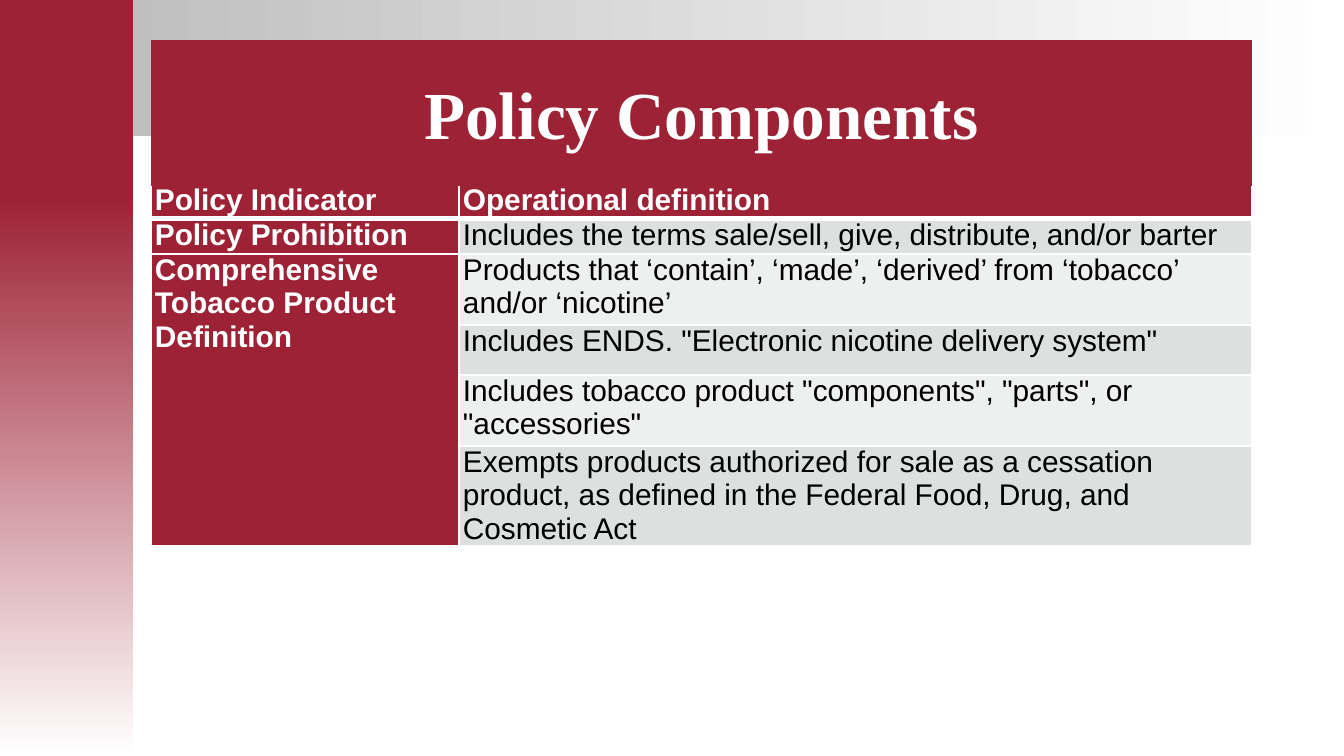
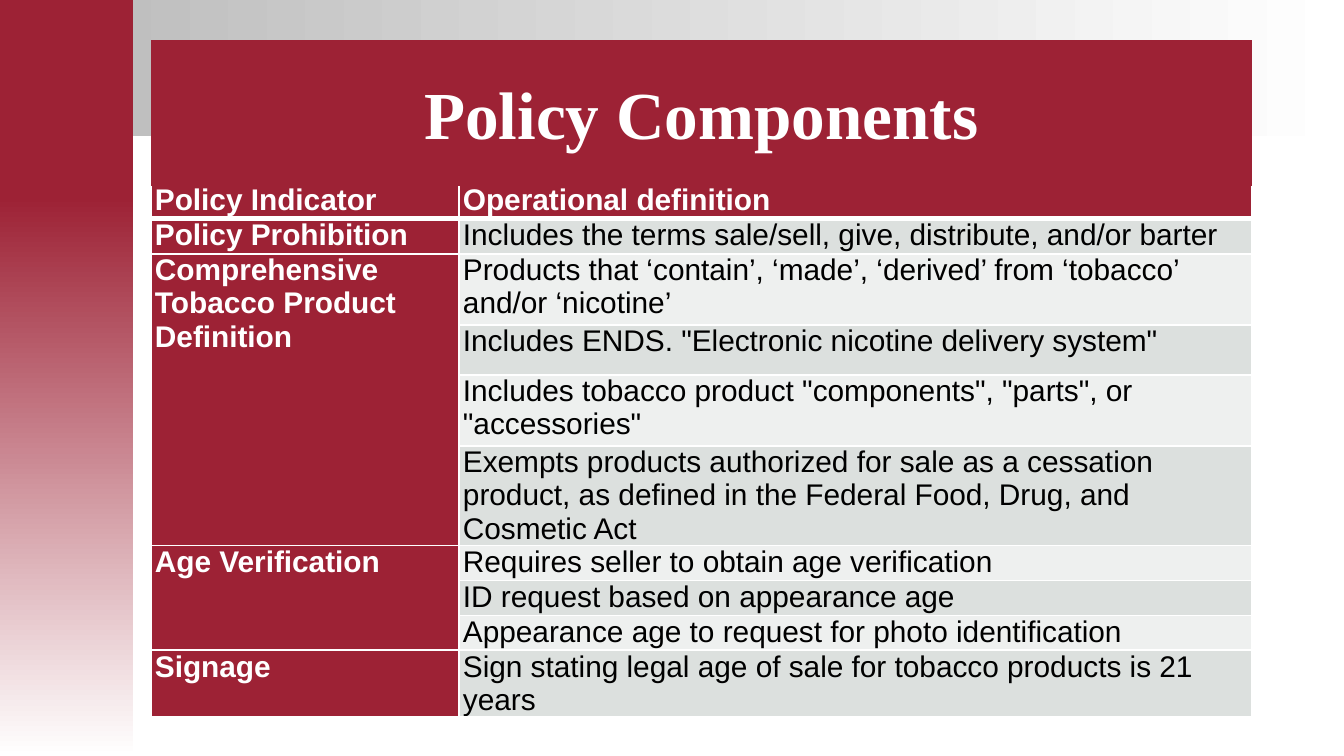
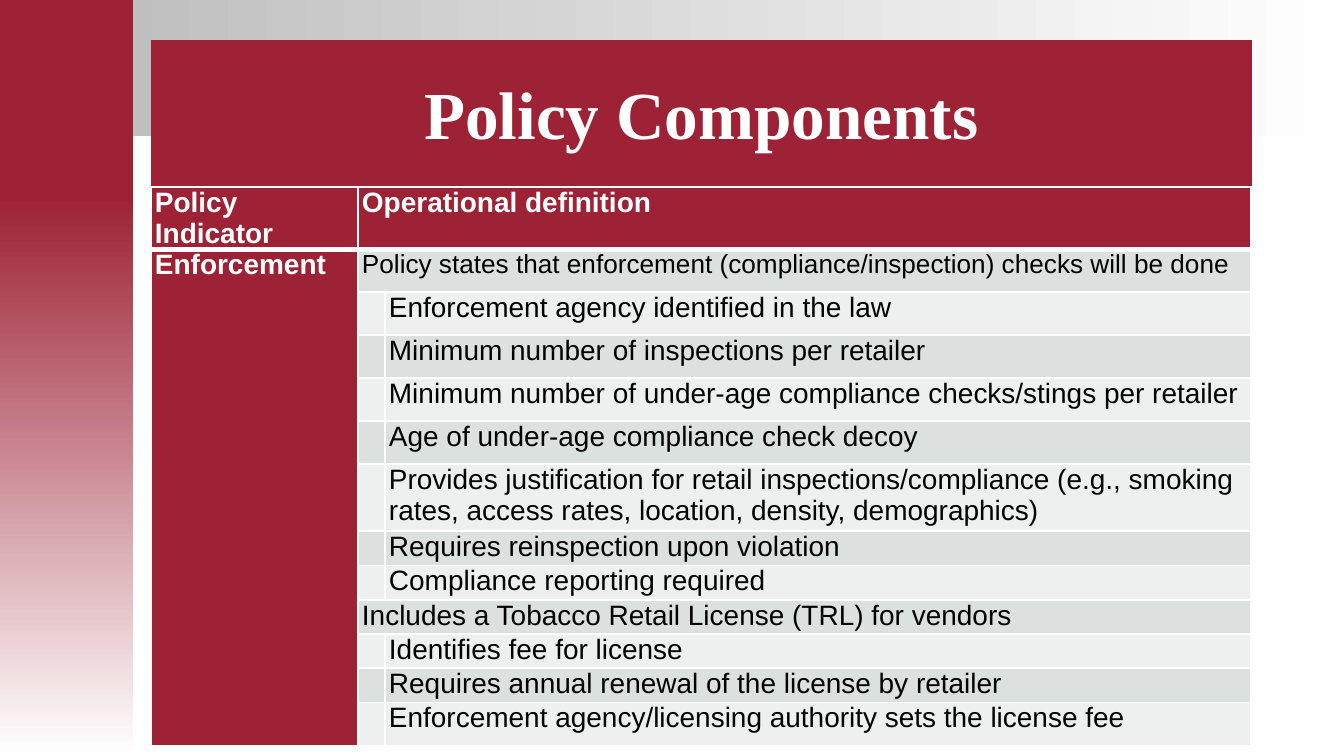
import collections

import lxml.etree
import pptx
import pptx.dml.color
import pptx.enum.shapes
import pptx.enum.text
import pptx.oxml.ns
import pptx.util

PX = 914400 / 134.4
COLORS = {
    "crimson": "9D2235",
    "white": "FFFFFF",
    "black": "000000",
    "silver": "BFBFBF",
    "odd": "DCE0DE",
    "even": "EEF0EF",
}
TITLE_BOX = (151, 40, 1101, 146)
HEADINGS = ("Policy Indicator", "Operational definition")

Definition = collections.namedtuple(
    "Definition", "text height nested size", defaults=(35, False, None))

PRODUCT_GROUPS = [
    ("Policy Prohibition", [
        Definition("Includes the terms sale/sell, give, distribute, and/or barter"),
    ]),
    ("Comprehensive Tobacco Product Definition", [
        Definition("Products that ‘contain’, ‘made’, ‘derived’ from ‘tobacco’ and/or ‘nicotine’", 71),
        Definition('Includes ENDS. "Electronic nicotine delivery system"', 50),
        Definition('Includes tobacco product "components", "parts", or "accessories"', 71),
        Definition("Exempts products authorized for sale as a cessation product, "
                   "as defined in the Federal Food, Drug, and Cosmetic Act", 71),
    ]),
]
SELLER_GROUPS = [
    ("Age Verification", [
        Definition("Requires seller to obtain age verification"),
        Definition("ID request based on appearance age"),
        Definition("Appearance age to request for photo identification"),
    ]),
    ("Signage", [
        Definition("Sign stating legal age of sale for tobacco products is 21 years"),
    ]),
]
ENFORCEMENT_GROUPS = [
    ("Enforcement", [
        Definition("Policy states that enforcement (compliance/inspection) checks will be done", 43, size=14),
        Definition("Enforcement agency identified in the law", 43, True),
        Definition("Minimum number of inspections per retailer", 43, True),
        Definition("Minimum number of under-age compliance checks/stings per retailer", 43, True),
        Definition("Age of under-age compliance check decoy", 43, True),
        Definition("Provides justification for retail inspections/compliance (e.g., smoking rates, "
                   "access rates, location, density, demographics)", 67, True),
        Definition("Requires reinspection upon violation", 34, True),
        Definition("Compliance reporting required", 34, True),
        Definition("Includes a Tobacco Retail License (TRL) for vendors", 34),
        Definition("Identifies fee for license", 34, True),
        Definition("Requires annual renewal of the license by retailer", 34, True),
        Definition("Enforcement agency/licensing authority sets the license fee", 43, True),
    ]),
]


def px(length):
    """Turn whole pixels into EMU."""
    return pptx.util.Emu(round(length * PX))


def rgb(name):
    """Look up a named colour."""
    return pptx.dml.color.RGBColor.from_string(COLORS[name])


def write(frame, text, size=16, font="Arial", color="black", bold=False, align=None):
    """Fill a text frame with one formatted paragraph."""
    paragraph = frame.paragraphs[0]
    paragraph.alignment = align
    run = paragraph.add_run()
    run.text = text
    run.font.size = pptx.util.Pt(size)
    run.font.name = font
    run.font.bold = bold
    run.font.color.rgb = rgb(color)


def add_band(slide, box, stops, angle):
    """Draw a gradient band and place it on the layout behind everything."""
    band = slide.shapes.add_shape(
        pptx.enum.shapes.MSO_SHAPE.RECTANGLE, *map(px, box))
    band.shadow.inherit = False
    band.line.fill.background()
    band.fill.gradient()
    band.fill.gradient_angle = angle
    for stop, (position, color) in zip(band.fill.gradient_stops, stops):
        stop.position = position
        stop.color.rgb = rgb(color)
    slide.slide_layout.placeholders[0].element.addprevious(band.element)


def add_bands(slide):
    """Give the shared layout its top and left bands."""
    add_band(slide, (113, 0, 1231, 136), [(0, "silver"), (1, "white")], 0)
    add_band(slide, (0, 0, 133, 756), [(0.26, "crimson"), (1, "white")], 270)


def place_title(slide, box, text):
    """Turn the title placeholder into a crimson banner in front."""
    title = slide.shapes.title
    title.left, title.top, title.width, title.height = map(px, box)
    title.fill.solid()
    title.fill.fore_color.rgb = rgb("crimson")
    frame = title.text_frame
    frame.word_wrap = True
    frame.auto_size = pptx.enum.text.MSO_AUTO_SIZE.NONE
    frame.vertical_anchor = pptx.enum.text.MSO_ANCHOR.MIDDLE
    frame.margin_left = frame.margin_right = px(9)
    frame.margin_top = frame.margin_bottom = px(5)
    write(frame, text, size=36, font="Times New Roman", color="white", bold=True,
          align=pptx.enum.text.PP_ALIGN.CENTER)
    slide.shapes.element.append(title.element)


def style_cell(cell, fill, size, top, bottom):
    """Set a cell's margins, white borders, fill and resting text size."""
    cell.margin_left = cell.margin_right = px(4)
    cell.margin_top = cell.margin_bottom = 0
    qn = pptx.oxml.ns.qn
    properties = cell._tc.get_or_add_tcPr()
    for side, points in (("L", 1), ("R", 1), ("T", top), ("B", bottom)):
        border = lxml.etree.SubElement(
            properties, qn("a:ln" + side), w=str(pptx.util.Pt(points)))
        solid = lxml.etree.SubElement(border, qn("a:solidFill"))
        lxml.etree.SubElement(solid, qn("a:srgbClr"), val=COLORS["white"])
    cell.fill.solid()
    cell.fill.fore_color.rgb = rgb(fill)
    resting = cell.text_frame.paragraphs[0]._p
    lxml.etree.SubElement(resting, qn("a:endParaRPr"), sz=str(size * 100))


def add_policy_table(slide, box, widths, header_height, groups, size):
    """Build a table of indicators, each spanning its definitions."""
    definitions = [item for _, items in groups for item in items]
    left, top, width, height = map(px, box)
    holder = slide.shapes.add_table(
        len(definitions) + 1, len(widths), left, top, width, height)
    table = holder.table
    last = len(widths) - 1
    for column, column_width in zip(table.columns, widths):
        column.width = px(column_width)
    heights = [header_height] + [item.height for item in definitions]
    for r, row_height in enumerate(heights):
        table.rows[r].height = px(row_height)
        for c in range(len(widths)):
            fill = "crimson" if r == 0 or c == 0 else "odd" if r % 2 else "even"
            style_cell(table.cell(r, c), fill, size,
                       top=3 if r == 1 else 1, bottom=3 if r == 0 else 1)
    holder.height = height

    for c, heading in enumerate(HEADINGS):
        write(table.cell(0, c).text_frame, heading, size=size, color="white", bold=True)
    if last > 1:
        table.cell(0, 1).merge(table.cell(0, last))

    row = 1
    for indicator, items in groups:
        head = table.cell(row, 0)
        write(head.text_frame, indicator, size=size, color="white", bold=True)
        if len(items) > 1:
            head.merge(table.cell(row + len(items) - 1, 0))
        for item in items:
            cell = table.cell(row, last if item.nested else 1)
            write(cell.text_frame, item.text, size=item.size or size)
            if last > 1 and not item.nested:
                cell.merge(table.cell(row, last))
            row += 1


def add_policy_slide(deck, **table):
    """Add one slide with the banner title and its policy table."""
    slide = deck.slides.add_slide(deck.slide_layouts[5])
    add_policy_table(slide, **table)
    place_title(slide, TITLE_BOX, "Policy Components")
    return slide


def main():
    """Build and save the deck."""
    deck = pptx.Presentation()
    deck.slide_width, deck.slide_height = px(1344), px(756)
    overview = {"widths": (308, 793), "header_height": 35, "size": 16}
    first = add_policy_slide(
        deck, box=(151, 184, 1101, 372), groups=PRODUCT_GROUPS, **overview)
    add_bands(first)
    add_policy_slide(deck, box=(151, 184, 1101, 551),
                     groups=PRODUCT_GROUPS + SELLER_GROUPS, **overview)
    add_policy_slide(deck, box=(151, 187, 1100, 562), groups=ENFORCEMENT_GROUPS,
                     widths=(207, 27, 866), header_height=43, size=15)
    deck.save("out.pptx")


if __name__ == "__main__":
    main()
